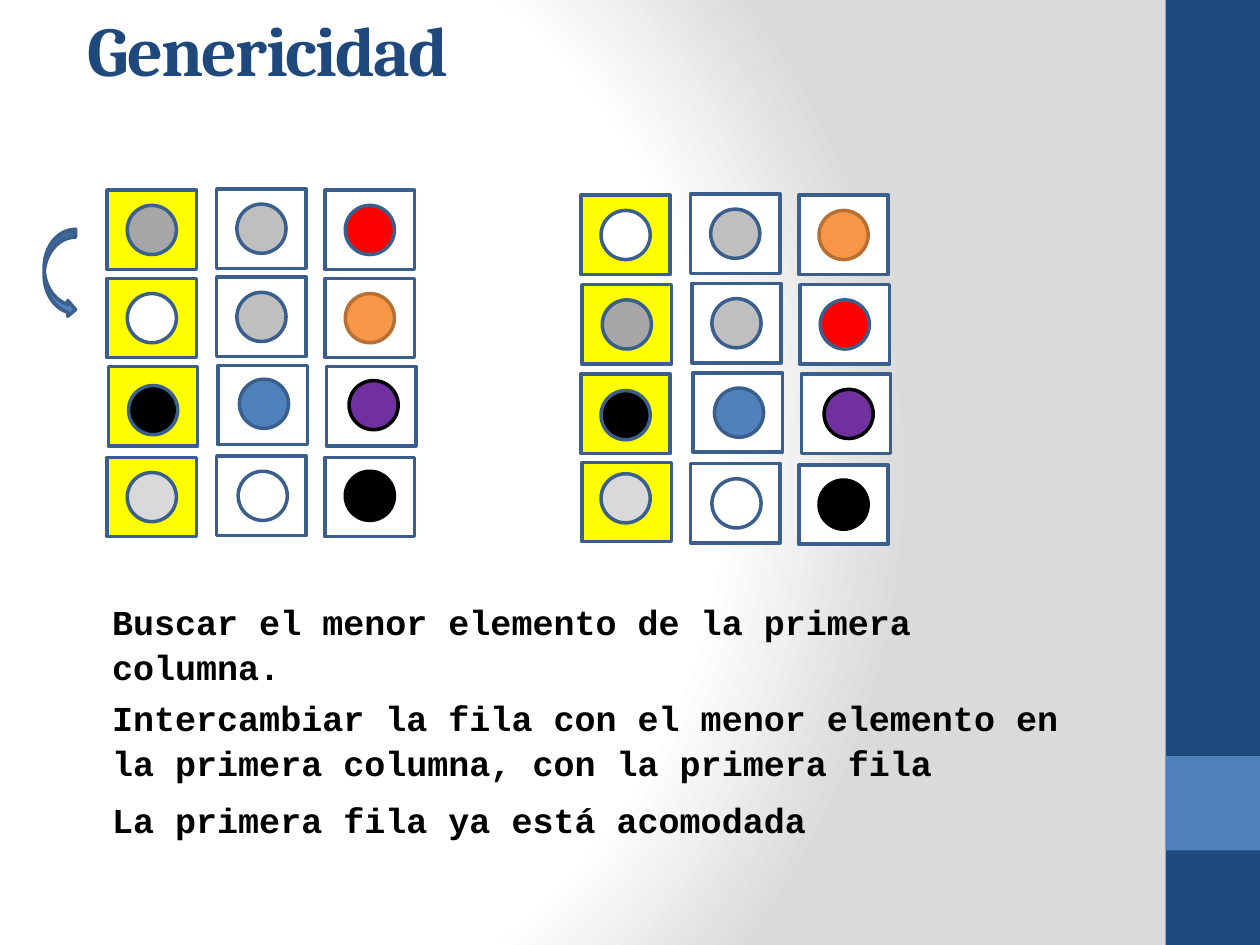
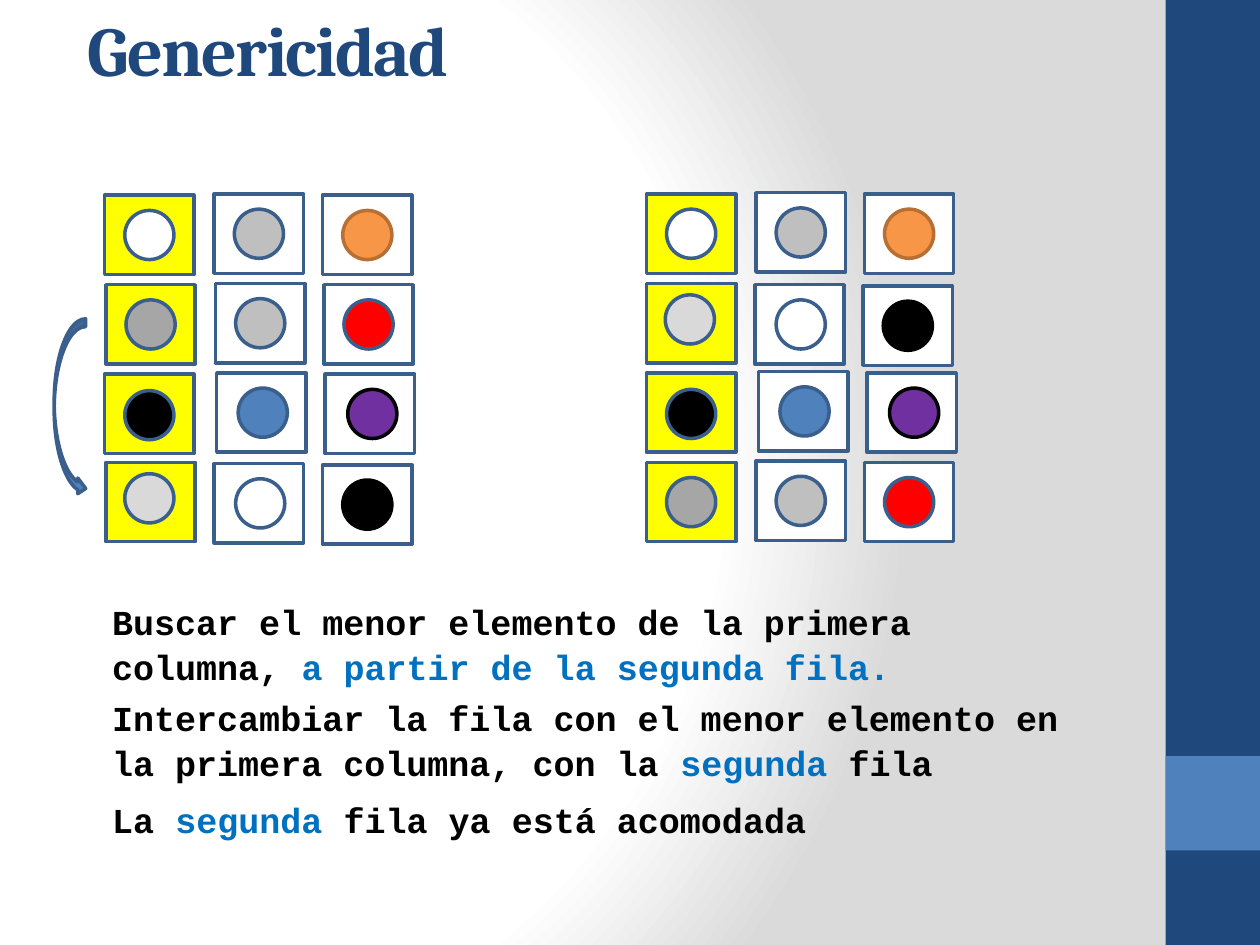
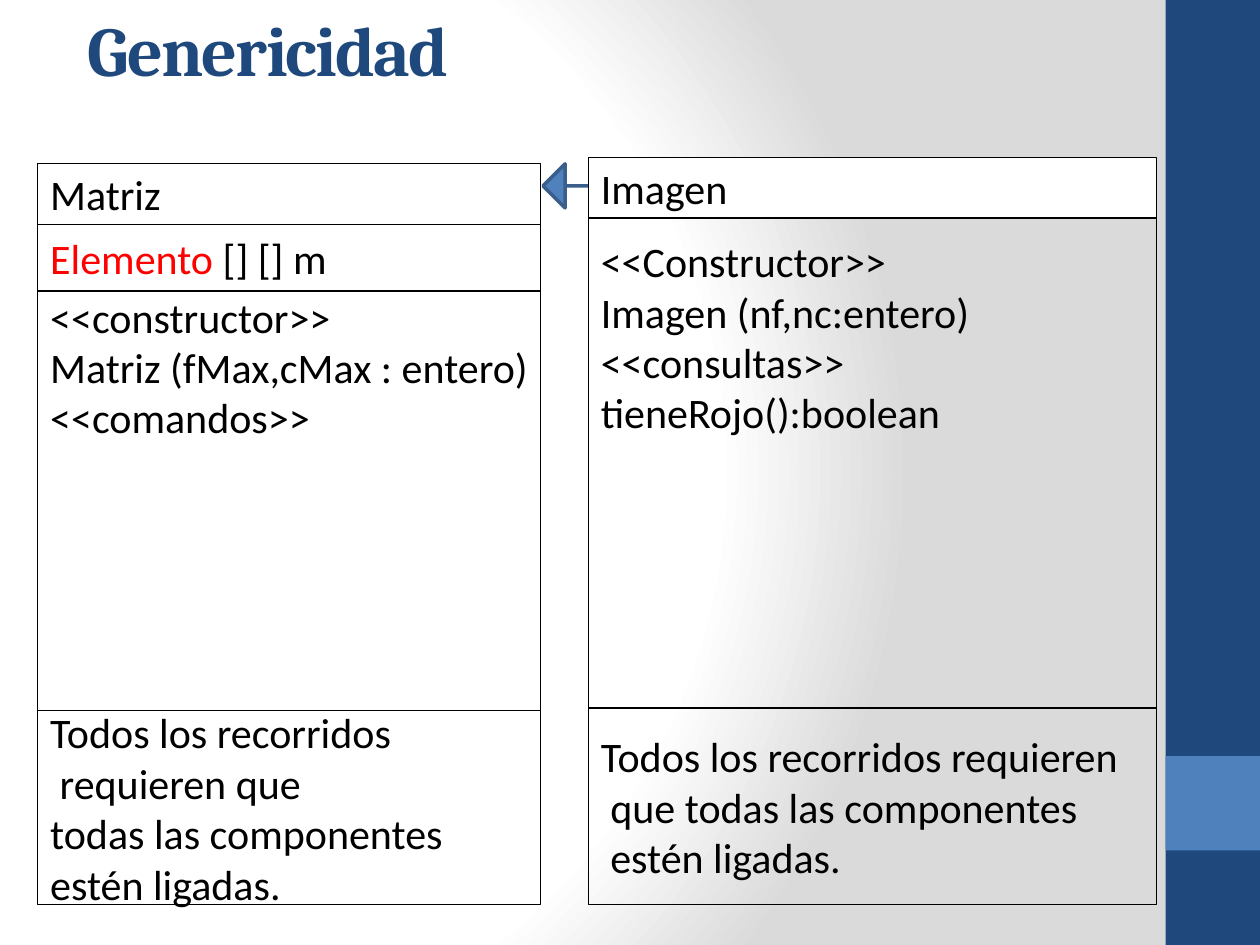
"""Build three slides on genericity: two row exchanges and a class diagram."""
from dataclasses import dataclass

from lxml import etree
from pptx import Presentation
from pptx.dml.color import RGBColor
from pptx.enum.shapes import MSO_SHAPE
from pptx.enum.text import MSO_ANCHOR, PP_ALIGN
from pptx.oxml import parse_xml
from pptx.oxml.ns import qn
from pptx.util import Emu, Pt

RECTANGLE = MSO_SHAPE.RECTANGLE
OVAL = MSO_SHAPE.OVAL
CURVED_ARROW = MSO_SHAPE.CURVED_RIGHT_ARROW
LEFT_ARROW = MSO_SHAPE.LEFT_ARROW
TOP, MIDDLE = MSO_ANCHOR.TOP, MSO_ANCHOR.MIDDLE
LEFT = PP_ALIGN.LEFT

EMU_PER_PX = 9144
SLIDE_WIDTH, SLIDE_HEIGHT = 1000, 750


@dataclass(frozen=True)
class Theme:
    """Colours, fonts and type sizes shared by the slides."""

    navy: str = "1F497D"
    blue: str = "4F81BD"
    outline: str = "3A5F8C"
    highlight: str = "0070C0"
    yellow: str = "FFFF00"
    white: str = "FFFFFF"
    black: str = "000000"
    red: str = "FF0000"
    orange: str = "F79646"
    brown: str = "B76F34"
    purple: str = "7030A0"
    dark_grey: str = "A6A6A6"
    grey: str = "BFBFBF"
    light_grey: str = "D9D9D9"
    backdrop: str = "DADADA"
    title_font: str = "Cambria"
    code_font: str = "Courier New"
    diagram_font: str = "Calibri"
    title_size: int = 40
    code_size: int = 20
    diagram_size: int = 24
    thick: float = 2
    thin: float = 0.75


THEME = Theme()


@dataclass(frozen=True)
class Row:
    """A matrix row: disc colours, cell offsets and disc offsets in the cells."""

    discs: tuple
    cells: tuple = ((0, 0), (87, -1), (173, 0))
    spots: tuple = ((16, 12), (16, 12), (16, 12))


BLACK_DISCS = (
    (THEME.black, THEME.outline), (THEME.blue, THEME.outline), (THEME.purple, THEME.black))
LIGHT_DISCS = (
    (THEME.light_grey, THEME.outline), (THEME.white, THEME.outline), (THEME.black, THEME.black))
GREY_ROW = Row((
    (THEME.dark_grey, THEME.outline), (THEME.grey, THEME.outline), (THEME.red, THEME.outline)))
WHITE_ROW = Row((
    (THEME.white, THEME.outline), (THEME.grey, THEME.outline), (THEME.orange, THEME.brown)))
BLACK_ROW = Row(BLACK_DISCS, spots=((16, 15), (17, 11), (18, 11)))
LIGHT_ROW = Row(LIGHT_DISCS, spots=((16, 12), (17, 12), (16, 11)))
WIDE_BLACK_ROW = Row(
    BLACK_DISCS, ((0, 0), (89, -1), (175, 0)), ((16, 13), (17, 12), (18, 12)))
NARROW_LIGHT_ROW = Row(
    LIGHT_DISCS, ((0, 0), (86, 1), (172, 2)), ((15, 9), (17, 12), (16, 12)))

UNSORTED = (
    (0, 0, GREY_ROW), (0, 70, WHITE_ROW), (1, 140, BLACK_ROW), (0, 212, LIGHT_ROW))
FIRST_SORTED = (
    (0, 0, WHITE_ROW), (1, 71, GREY_ROW), (0, 142, WIDE_BLACK_ROW), (1, 212, NARROW_LIGHT_ROW))
SECOND_SORTED = (
    (0, 0, WHITE_ROW), (0, 71, NARROW_LIGHT_ROW), (0, 142, WIDE_BLACK_ROW), (0, 213, GREY_ROW))


def px(length):
    """Turn a length in px into EMU."""
    return Emu(length * EMU_PER_PX)


def rgb(colour):
    """Turn a hexadecimal colour into an RGBColor."""
    return RGBColor.from_string(colour)


def add_figure(slide, kind, box, fill=None, line=None, width=THEME.thick):
    """Add a preset shape without shadow; no colour means no fill or no line."""
    shape = slide.shapes.add_shape(kind, *map(px, box))
    shape.shadow.inherit = False
    if fill:
        shape.fill.solid()
        shape.fill.fore_color.rgb = rgb(fill)
    else:
        shape.fill.background()
    if line:
        shape.line.color.rgb = rgb(line)
        shape.line.width = Pt(width)
    else:
        shape.line.fill.background()
    return shape


def write(text_frame, lines, font, size, bold=False, before=0, spacing=None):
    """Write paragraphs given as lists of (text, colour) runs."""
    text_frame.word_wrap = True
    for index, runs in enumerate(lines):
        paragraph = text_frame.add_paragraph() if index else text_frame.paragraphs[0]
        paragraph.alignment = LEFT
        paragraph.space_before = Pt(before)
        if spacing:
            paragraph.line_spacing = spacing
        for text, colour in runs:
            run = paragraph.add_run()
            run.text = text
            run.font.name = font
            run.font.size = Pt(size)
            run.font.bold = bold
            run.font.color.rgb = rgb(colour)


def set_backdrop(master):
    """Give the master a radial gradient background."""
    master.background.fill.gradient()
    gradient = master.element.find(".//" + qn("p:bgPr")).find(qn("a:gradFill"))
    namespace = etree.QName(gradient).namespace
    stops = "".join(
        f'<a:gs pos="{position * 1000}"><a:srgbClr val="{colour}"/></a:gs>'
        for position, colour in ((0, THEME.white), (75, THEME.white), (100, THEME.backdrop)))
    radial = parse_xml(
        f'<a:gradFill xmlns:a="{namespace}" rotWithShape="1"><a:gsLst>{stops}</a:gsLst>'
        '<a:path path="circle"><a:fillToRect l="20000" t="50000" r="100000" b="50000"/>'
        '</a:path></a:gradFill>')
    gradient.getparent().replace(gradient, radial)


def add_titled_slide(presentation):
    """Add a blank slide with the side band and the title."""
    slide = presentation.slides.add_slide(presentation.slide_layouts[6])
    band_left, band_width = 925, 75
    add_figure(slide, RECTANGLE, (band_left, 0, band_width, SLIDE_HEIGHT), THEME.navy)
    add_figure(slide, RECTANGLE, (band_left, 600, band_width, band_width), THEME.blue)
    title = slide.shapes.add_textbox(*map(px, (60, 0, 833, 125)))
    write(title.text_frame, [[("Genericidad", THEME.navy)]],
          THEME.title_font, THEME.title_size, bold=True)
    run = title.text_frame.paragraphs[0].runs[0]
    run.font.element.set("spc", "-100") if hasattr(run.font, "element") else (
        title.element.find(".//" + qn("a:rPr")).set("spc", "-100"))
    return slide


def add_matrix(slide, left, top, rows):
    """Draw the rows of cells with a disc in each, the key column in yellow."""
    for row_x, row_y, row in rows:
        for column, (disc, cell, spot) in enumerate(zip(row.discs, row.cells, row.spots)):
            x, y = left + row_x + cell[0], top + row_y + cell[1]
            fill = THEME.white if column else THEME.yellow
            add_figure(slide, RECTANGLE, (x, y, 71, 63), fill, THEME.outline)
            add_figure(slide, OVAL, (x + spot[0], y + spot[1], 39, 39), *disc)


def add_explanation(slide, top, lines):
    """Write a block of bold fixed-pitch text."""
    box = slide.shapes.add_textbox(*map(px, (67, top, 804, 126)))
    box.text_frame.margin_left = px(22)
    write(box.text_frame, lines, THEME.code_font, THEME.code_size,
          bold=True, before=4, spacing=1.06)


def add_exchange_slide(presentation, matrices, arrow, steps, result):
    """Build a slide with matrices before and after a row exchange."""
    slide = add_titled_slide(presentation)
    for left, top, rows in matrices:
        add_matrix(slide, left, top, rows)
    add_figure(slide, CURVED_ARROW, arrow, THEME.blue, THEME.outline)
    add_explanation(slide, 470, steps)
    add_explanation(slide, 627, [result])


def add_class(slide, left, top, width, sections):
    """Stack the sections of a class box: height, fill, top inset and lines."""
    for height, fill, inset, lines in sections:
        shape = add_figure(
            slide, RECTANGLE, (left, top, width, height), fill, THEME.black, THEME.thin)
        frame = shape.text_frame
        frame.vertical_anchor = MIDDLE if inset is None else TOP
        frame.margin_right = 0
        if inset is not None:
            frame.margin_top = px(inset)
        write(frame, lines, THEME.diagram_font, THEME.diagram_size)
        top += height


def plain(*texts):
    """Make one black run for each line."""
    return [[(text, THEME.black)] for text in texts]


def add_class_slide(presentation):
    """Build the class diagram slide."""
    slide = add_titled_slide(presentation)
    add_class(slide, 30, 130, 399, (
        (48, None, None, plain("Matriz")),
        (53, None, None, [[("Elemento", THEME.red), (" [] [] m", THEME.black)]]),
        (333, None, 0, plain(
            "<<constructor>>", "Matriz (fMax,cMax : entero)", "<<comandos>>")),
        (154, None, None, plain(
            "Todos los recorridos", " requieren que", "todas las componentes",
            "estén ligadas.")),
    ))
    arrow = add_figure(slide, LEFT_ARROW, (431, 130, 71, 35), THEME.blue, THEME.outline)
    arrow.adjustments[0] = 0
    arrow.adjustments[1] = 0.5
    add_class(slide, 467, 125, 451, (
        (48, THEME.white, None, plain("Imagen")),
        (389, None, 14, plain(
            "<<Constructor>>", "Imagen (nf,nc:entero)", "<<consultas>>",
            "tieneRojo():boolean")),
        (156, None, None, plain(
            "Todos los recorridos requieren", " que todas las componentes",
            " estén ligadas.")),
    ))


def main():
    """Build and save the presentation."""
    presentation = Presentation()
    presentation.slide_width, presentation.slide_height = px(SLIDE_WIDTH), px(SLIDE_HEIGHT)
    set_backdrop(presentation.slide_master)
    add_exchange_slide(
        presentation,
        ((85, 151, UNSORTED), (461, 155, FIRST_SORTED)),
        (35, 182, 25, 70),
        plain("Buscar el menor elemento de la primera columna.",
              "Intercambiar la fila con el menor elemento en la primera columna, "
              "con la primera fila"),
        [("La primera fila ya está acomodada", THEME.black)])
    add_exchange_slide(
        presentation,
        ((83, 155, FIRST_SORTED), (513, 154, SECOND_SORTED)),
        (43, 253, 25, 141),
        [[("Buscar el menor elemento de la primera columna, ", THEME.black),
          ("a partir de la segunda fila.", THEME.highlight)],
         [("Intercambiar la fila con el menor elemento en la primera columna, con la ",
           THEME.black),
          ("segunda", THEME.highlight), (" fila", THEME.black)]],
        [("La ", THEME.black), ("segunda", THEME.highlight),
         (" fila ya está acomodada", THEME.black)])
    add_class_slide(presentation)
    presentation.save("out.pptx")


if __name__ == "__main__":
    main()
